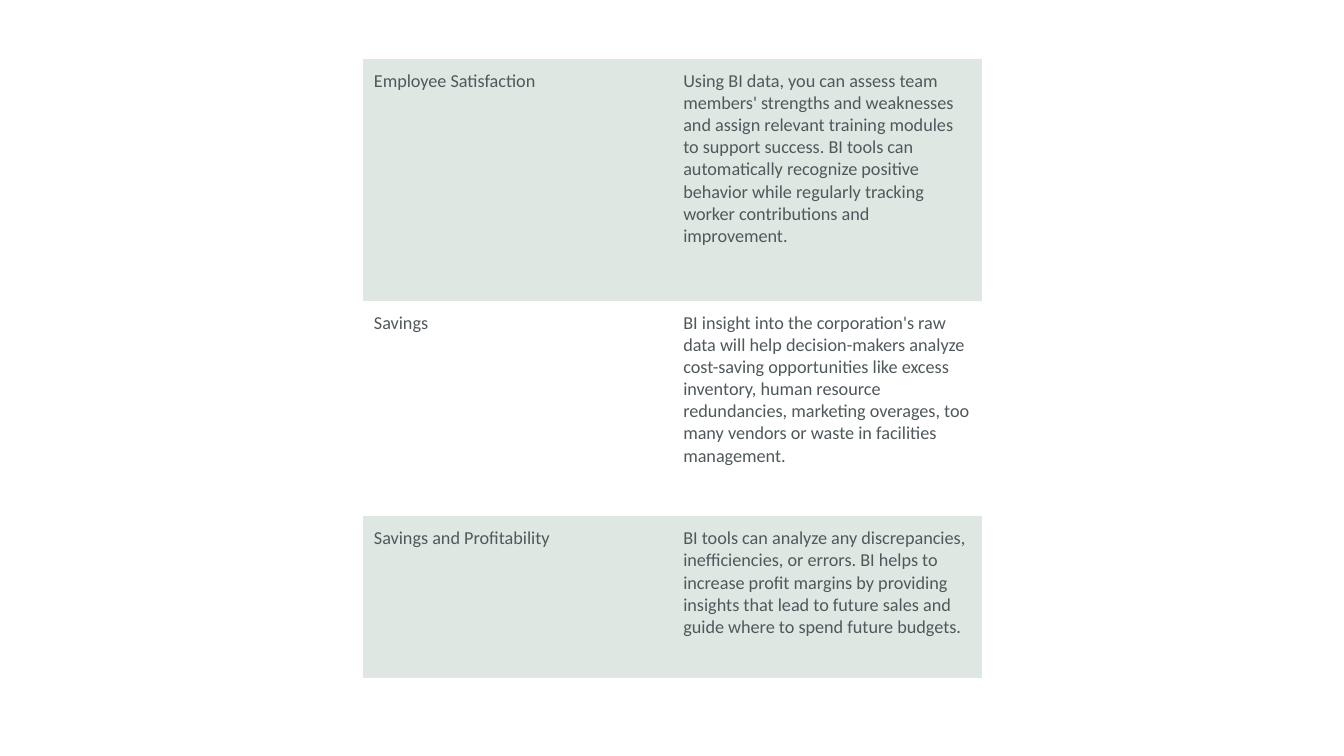
from lxml import etree
from pptx import Presentation
from pptx.dml.color import RGBColor
from pptx.oxml.ns import qn
from pptx.util import Pt

SAGE = RGBColor(0xDF, 0xE7, 0xE3)
WHITE = RGBColor(0xFF, 0xFF, 0xFF)
SLATE = RGBColor(0x4F, 0x58, 0x5B)
BANDS = (SAGE, WHITE)
FONT = {"name": "Calibri", "size": Pt(13), "bold": False}
PAD = {f"margin_{side}": Pt(7.9) for side in ("left", "right", "top", "bottom")}
PLAIN = {"first_row": False, "horz_banding": False}
WIDTH = 221

# Height in points, topic, benefit
ROWS = [
    (172.8, "Employee Satisfaction",
     "Using BI data, you can assess team members' strengths and weaknesses "
     "and assign relevant training modules to support success. BI tools can "
     "automatically recognize positive behavior while regularly tracking "
     "worker contributions and improvement."),
    (154, "Savings",
     "BI insight into the corporation's raw data will help decision-makers "
     "analyze cost-saving opportunities like excess inventory, human resource "
     "redundancies, marketing overages, too many vendors or waste in "
     "facilities management."),
    (115.2, "Savings and Profitability",
     "BI tools can analyze any discrepancies, inefficiencies, or errors. BI "
     "helps to increase profit margins by providing insights that lead to "
     "future sales and guide where to spend future budgets."),
]


def style(item, values):
    for name, value in values.items():
        setattr(item, name, value)


def clear_lines(cell):
    """Remove all four borders; call before the cell is filled."""
    props = cell._tc.get_or_add_tcPr()
    for side in ("lnL", "lnR", "lnT", "lnB"):
        line = etree.SubElement(props, qn(f"a:{side}"), w="0")
        etree.SubElement(line, qn("a:noFill"))


deck = Presentation()
deck.slide_width, deck.slide_height = Pt(960), Pt(540)
slide = deck.slides.add_slide(deck.slide_layouts[6])

total = sum(row[0] for row in ROWS)
table = slide.shapes.add_table(
    len(ROWS), 2, Pt(259.2), Pt(42), Pt(2 * WIDTH), Pt(total)).table
style(table, PLAIN)
for column in table.columns:
    column.width = Pt(WIDTH)

for index, (height, *texts) in enumerate(ROWS):
    row = table.rows[index]
    row.height = Pt(height)
    for cell, text in zip(row.cells, texts):
        clear_lines(cell)
        style(cell, PAD)
        cell.fill.solid()
        cell.fill.fore_color.rgb = BANDS[index % 2]
        cell.text = text
        font = cell.text_frame.paragraphs[0].runs[0].font
        style(font, FONT)
        font.color.rgb = SLATE

deck.save("out.pptx")
